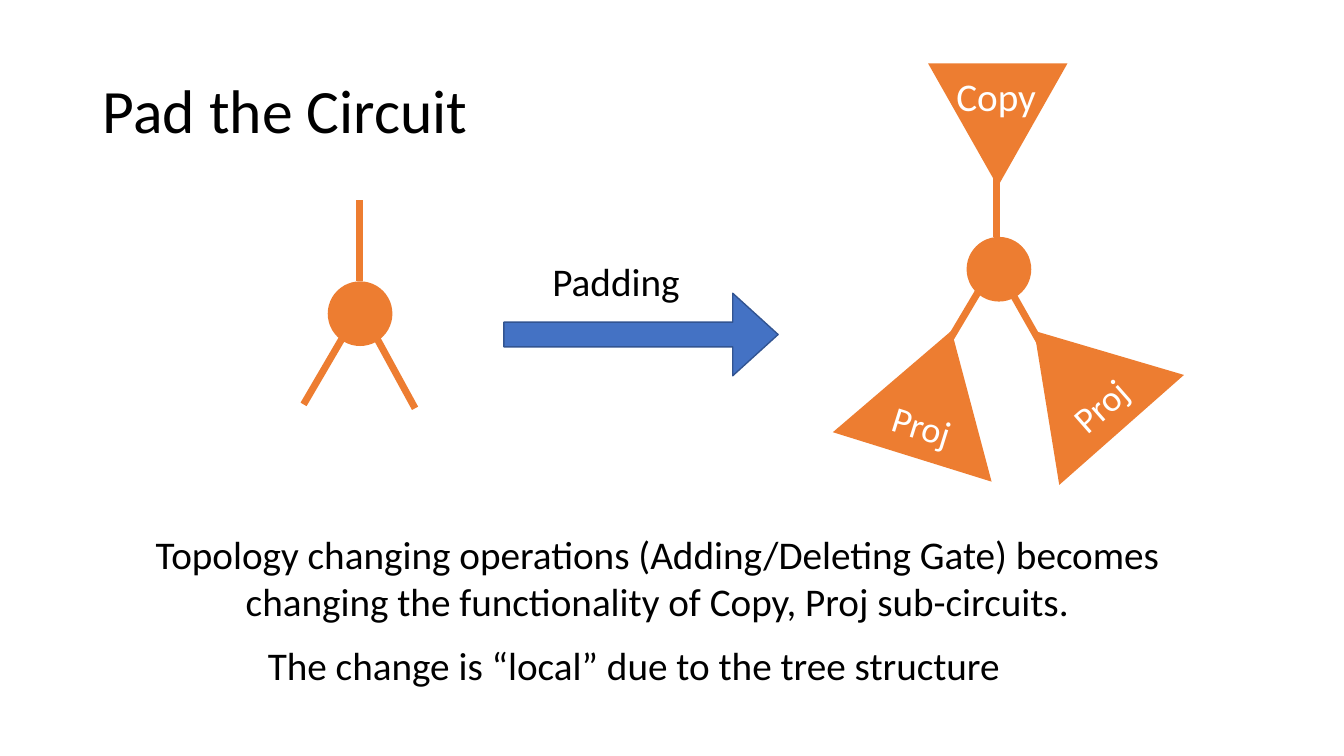
"""Builds the slide on padding a circuit gate with Copy and Proj sub-circuits."""
from dataclasses import dataclass

import pptx
import pptx.dml.color
import pptx.enum.shapes
import pptx.enum.text
import pptx.oxml.ns
import pptx.shapes.autoshape
import pptx.slide
import pptx.text.text
import pptx.util
from lxml import etree

Cm = pptx.util.Cm
Pt = pptx.util.Pt
RGBColor = pptx.dml.color.RGBColor
Shape = pptx.enum.shapes.MSO_SHAPE
Align = pptx.enum.text.PP_ALIGN
Anchor = pptx.enum.text.MSO_ANCHOR

ORANGE = RGBColor(0xED, 0x7D, 0x31)
BLUE = RGBColor(0x44, 0x72, 0xC4)
DARK_BLUE = RGBColor(0x32, 0x54, 0x91)
BLACK = RGBColor(0x00, 0x00, 0x00)
WHITE = RGBColor(0xFF, 0xFF, 0xFF)
FONT = "Calibri"
GATE_SIZE = 1.63


@dataclass(frozen=True)
class Box:
    left: float
    top: float
    width: float
    height: float

    def lengths(self) -> tuple[int, int, int, int]:
        return Cm(self.left), Cm(self.top), Cm(self.width), Cm(self.height)


@dataclass(frozen=True)
class Wire:
    x1: float
    y1: float
    x2: float
    y2: float


@dataclass(frozen=True)
class Gate:
    left: float
    top: float
    wires: tuple[Wire, ...]


@dataclass(frozen=True)
class SubCircuit:
    box: Box
    rotation: float
    label: str = ""


@dataclass(frozen=True)
class Caption:
    box: Box
    text: str
    align: Align = Align.CENTER
    color: RGBColor = BLACK
    wrap: bool = True
    inset: bool = True


GATES = (
    Gate(8.26, 7.09, (
        Wire(9.5, 8.53, 10.46, 10.29),
        Wire(8.69, 8.41, 7.65, 10.19),
        Wire(9.07, 5.05, 9.07, 7.09),
    )),
    Gate(24.36, 5.97, (
        Wire(25.12, 3.94, 25.12, 5.97),
        Wire(25.48, 7.34, 26.47, 9.09),
        Wire(24.66, 7.34, 23.62, 9.09),
    )),
)

SUB_CIRCUITS = (
    SubCircuit(Box(21.39, 8.26, 4.19, 3.33), 17.3, "Proj"),
    SubCircuit(Box(23.39, 1.6, 3.51, 3.1), 180),
    SubCircuit(Box(25.07, 7.92, 4.19, 3.33), 318.6, "Proj"),
)

CAPTIONS = (
    Caption(Box(13.67, 6.35, 3.76, 1.45), "Padding", Align.LEFT, wrap=False),
    Caption(Box(24.1, 1.83, 2.03, 1.19), "Copy", Align.LEFT, WHITE, wrap=False, inset=False),
    Caption(
        Box(3.28, 13.23, 26.57, 2.64),
        "Topology changing operations (Adding/Deleting Gate) becomes\n"
        "changing the functionality of Copy, Proj sub-circuits.",
    ),
    Caption(Box(5.05, 16.03, 21.84, 1.45), "The change is “local” due to the tree structure"),
)


def write(frame: pptx.text.text.TextFrame, text: str, size: float, color: RGBColor, align: Align) -> None:
    frame.text = text
    for paragraph in frame.paragraphs:
        paragraph.alignment = align
        for run in paragraph.runs:
            run.font.name = FONT
            run.font.size = Pt(size)
            run.font.color.rgb = color


def draw_shape(slide: pptx.slide.Slide, kind: Shape, box: Box, fill: RGBColor) -> pptx.shapes.autoshape.Shape:
    shape = slide.shapes.add_shape(kind, *box.lengths())
    shape.shadow.inherit = False
    shape.fill.solid()
    shape.fill.fore_color.rgb = fill
    shape.line.fill.background()
    return shape


def draw_wire(slide: pptx.slide.Slide, wire: Wire) -> None:
    line = slide.shapes.add_connector(
        pptx.enum.shapes.MSO_CONNECTOR.STRAIGHT, Cm(wire.x1), Cm(wire.y1), Cm(wire.x2), Cm(wire.y2)
    )
    line.line.color.rgb = ORANGE
    line.line.width = Pt(5)
    etree.SubElement(line._element.spPr, pptx.oxml.ns.qn("a:effectLst"))


def draw_gate(slide: pptx.slide.Slide, gate: Gate) -> None:
    draw_shape(slide, Shape.OVAL, Box(gate.left, gate.top, GATE_SIZE, GATE_SIZE), ORANGE)
    for wire in gate.wires:
        draw_wire(slide, wire)


def draw_sub_circuit(slide: pptx.slide.Slide, sub_circuit: SubCircuit) -> None:
    triangle = draw_shape(slide, Shape.ISOSCELES_TRIANGLE, sub_circuit.box, ORANGE)
    triangle.rotation = sub_circuit.rotation
    if sub_circuit.label:
        triangle.text_frame.vertical_anchor = Anchor.MIDDLE
        write(triangle.text_frame, sub_circuit.label, 26, WHITE, Align.CENTER)


def draw_padding_arrow(slide: pptx.slide.Slide) -> None:
    arrow = draw_shape(slide, Shape.RIGHT_ARROW, Box(12.7, 7.39, 6.91, 2.08), BLUE)
    arrow.adjustments[0] = 0.3
    arrow.adjustments[1] = 0.55
    arrow.line.color.rgb = DARK_BLUE
    arrow.line.width = Pt(1)


def draw_caption(slide: pptx.slide.Slide, caption: Caption) -> None:
    frame = slide.shapes.add_textbox(*caption.box.lengths()).text_frame
    frame.word_wrap = caption.wrap
    frame.auto_size = pptx.enum.text.MSO_AUTO_SIZE.SHAPE_TO_FIT_TEXT
    if not caption.inset:
        frame.margin_left = frame.margin_right = frame.margin_top = frame.margin_bottom = 0
    write(frame, caption.text, 28, caption.color, caption.align)


def draw_title(slide: pptx.slide.Slide) -> None:
    heading = slide.shapes.title
    heading.left, heading.top, heading.width, heading.height = Box(2.34, 1.02, 29.21, 3.68).lengths()
    heading.text_frame.vertical_anchor = Anchor.MIDDLE
    write(heading.text_frame, "Pad the Circuit", 44, BLACK, Align.LEFT)
    heading.text_frame.paragraphs[0].line_spacing = 0.9


def main() -> None:
    deck = pptx.Presentation()
    deck.slide_width = Cm(33.87)
    deck.slide_height = Cm(19.05)
    slide = deck.slides.add_slide(deck.slide_layouts.get_by_name("Title Only"))
    draw_title(slide)
    for gate in GATES:
        draw_gate(slide, gate)
    draw_padding_arrow(slide)
    for sub_circuit in SUB_CIRCUITS:
        draw_sub_circuit(slide, sub_circuit)
    for caption in CAPTIONS:
        draw_caption(slide, caption)
    deck.save("out.pptx")


if __name__ == "__main__":
    main()
